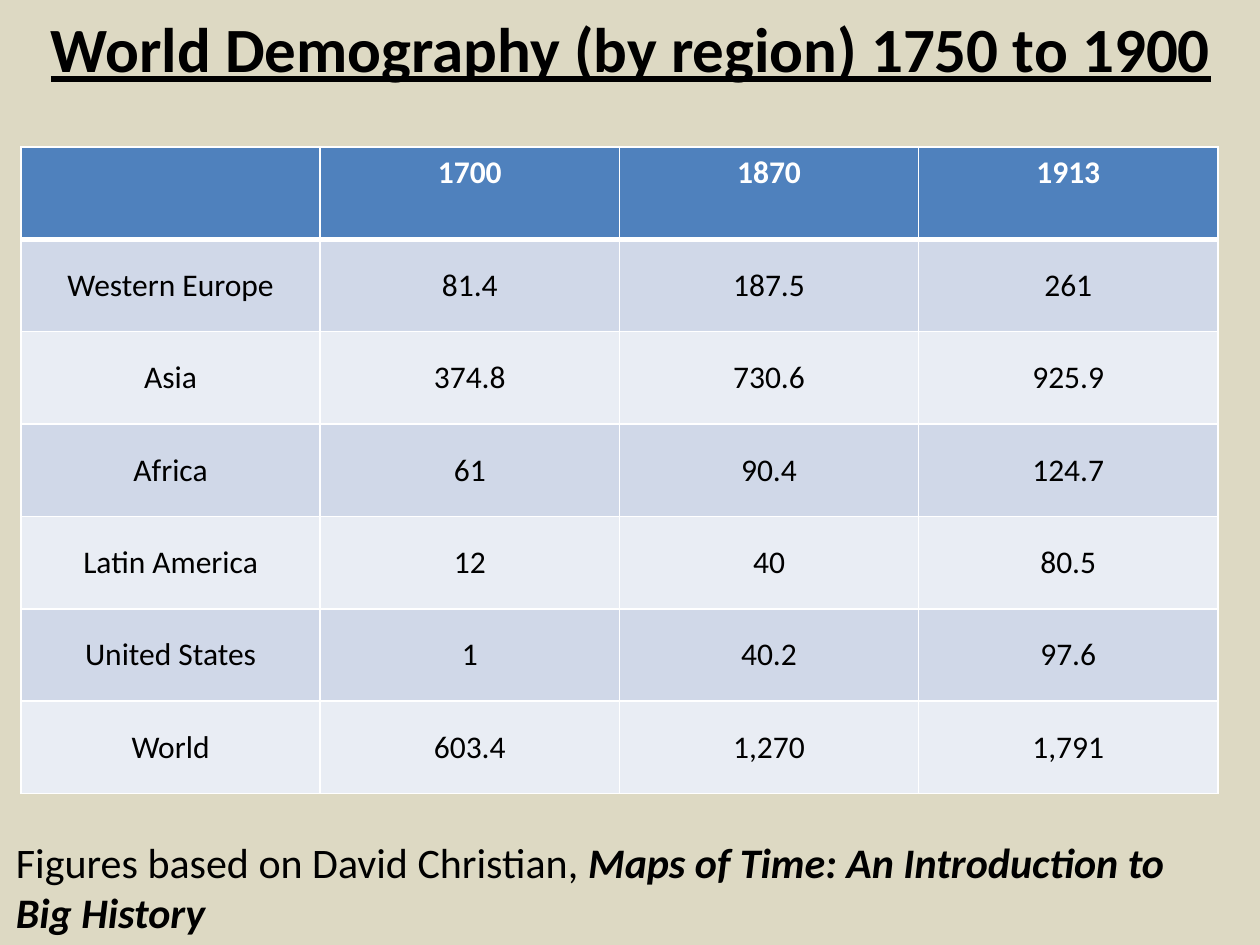
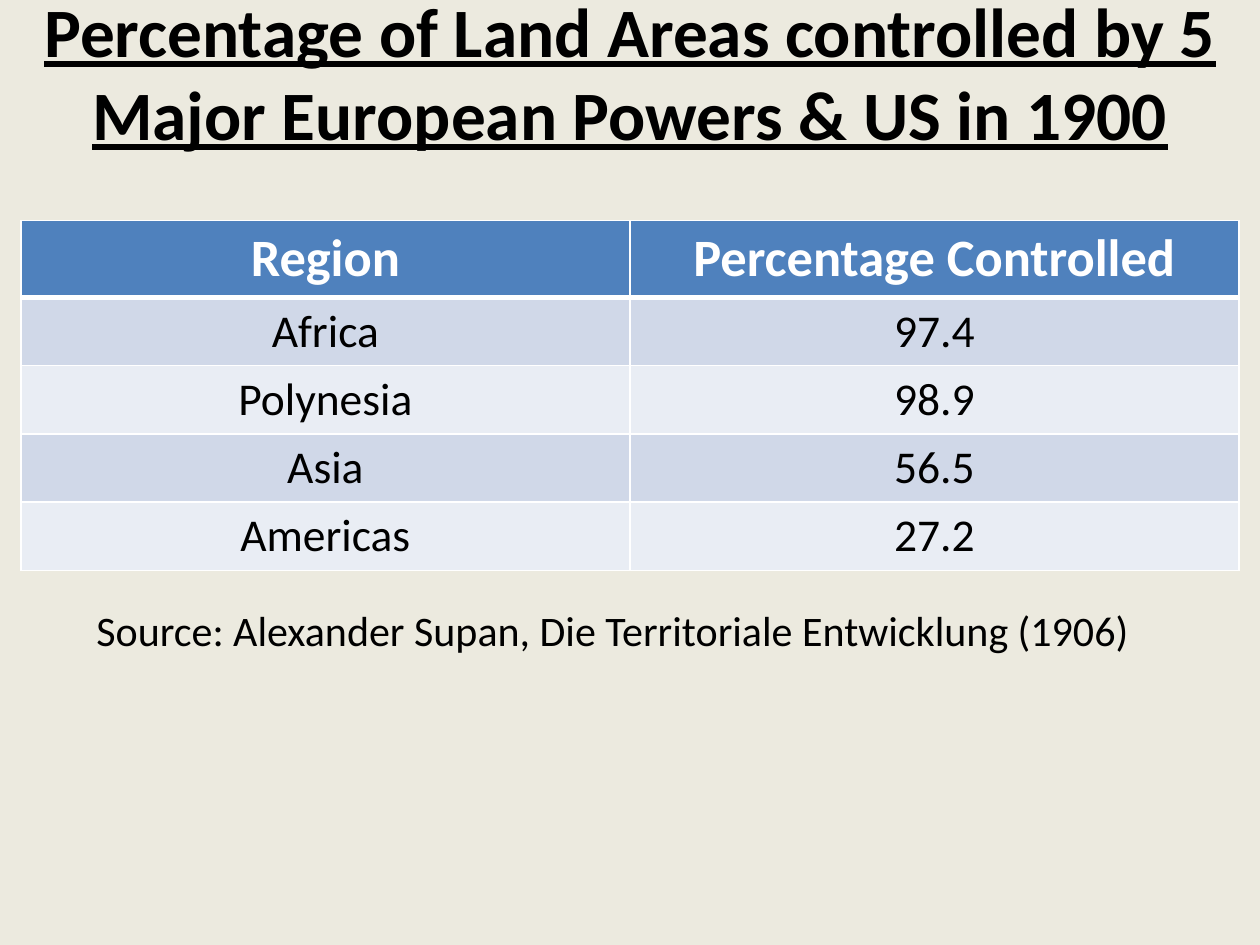
from lxml import etree
from pptx import Presentation
from pptx.dml.color import RGBColor
from pptx.enum.text import MSO_ANCHOR, MSO_AUTO_SIZE, PP_ALIGN
from pptx.oxml.ns import qn
from pptx.util import Pt

MID, TOP = MSO_ANCHOR.MIDDLE, MSO_ANCHOR.TOP
LEFT, CENTER = PP_ALIGN.LEFT, PP_ALIGN.CENTER
NONE, GROW = MSO_AUTO_SIZE.NONE, MSO_AUTO_SIZE.SHAPE_TO_FIT_TEXT

FONT = "Calibri"
HUES = {
    "sand": "DDD9C3",
    "pale": "ECEADF",
    "head": "4F81BD",
    "odd": "D0D8E8",
    "even": "E9EDF4",
    "text": "000000",
    "white": "FFFFFF",
}


def hue(name):
    return RGBColor.from_string(HUES[name])


class Deck:
    def __init__(self):
        self.prs = Presentation()
        self.prs.slide_width, self.prs.slide_height = Pt(720), Pt(540)
        self.slide = None

    def page(self, back):
        self.slide = self.prs.slides.add_slide(self.prs.slide_layouts[5])
        fill = self.slide.background.fill
        fill.solid()
        fill.fore_color.rgb = hue(back)

    def style(self, para, size, color="text", bold=False, align=CENTER):
        para.alignment = align
        for run in para.runs:
            font = run.font
            font.name, font.size, font.bold = FONT, Pt(size), bold
            font.color.rgb = hue(color)

    def title(self, text, box, size):
        shape = self.slide.shapes.title
        shape.left, shape.top, shape.width, shape.height = map(Pt, box)
        frame = shape.text_frame
        frame.text = text
        frame.word_wrap, frame.auto_size = True, NONE
        frame.vertical_anchor = MID
        para = frame.paragraphs[0]
        self.style(para, size, bold=True)
        para.runs[0].font.underline = True

    def note(self, text, box, book=""):
        frame = self.slide.shapes.add_textbox(*map(Pt, box)).text_frame
        frame.word_wrap, frame.auto_size = True, GROW
        frame.text = text
        para = frame.paragraphs[0]
        if book:
            para.add_run().text = book
        self.style(para, 24, align=LEFT)
        for run in para.runs[1:]:
            run.font.bold = run.font.italic = True

    def edge(self, cell, side, width):
        line = etree.SubElement(cell._tc.get_or_add_tcPr(), qn("a:ln" + side),
                                w=str(Pt(width)))
        fill = etree.SubElement(line, qn("a:solidFill"))
        etree.SubElement(fill, qn("a:srgbClr"), val=HUES["white"])

    def table(self, rows, box, highs, sizes, anchor):
        """highs, sizes: (header, body); anchor: header only."""
        grid = self.slide.shapes.add_table(
            len(rows), len(rows[0]), *map(Pt, box)).table
        for col in grid.columns:
            col.width = Pt(box[2] / len(rows[0]))
        for r, row in enumerate(rows):
            part = min(r, 1)
            grid.rows[r].height = Pt(highs[part])
            back = "head" if r == 0 else "odd" if r % 2 else "even"
            for c, text in enumerate(row):
                cell = grid.cell(r, c)
                # Borders come before the fill; a thick rule closes the header
                for side in "LRTB":
                    thick = (r, side) in ((0, "B"), (1, "T"))
                    self.edge(cell, side, 3 if thick else 1)
                cell.fill.solid()
                cell.fill.fore_color.rgb = hue(back)
                cell.vertical_anchor = MID if r else anchor
                cell.text_frame.text = text
                self.style(cell.text_frame.paragraphs[0], sizes[part],
                           "text" if r else "white", bold=r == 0)


def main():
    deck = Deck()

    # World demography
    deck.page("sand")
    deck.title("World Demography (by region) 1750 to 1900",
               (0.5, 6, 720, 42), 36)
    people = [
        ("", "1700", "1870", "1913"),
        ("Western Europe", "81.4", "187.5", "261"),
        ("Asia", "374.8", "730.6", "925.9"),
        ("Africa", "61", "90.4", "124.7"),
        ("Latin America", "12", "40", "80.5"),
        ("United States", "1", "40.2", "97.6"),
        ("World", "603.4", "1,270", "1,791"),
    ]
    deck.table(people, (12, 84, 684, 369.6), (52.8, 52.8), (18, 18), TOP)
    deck.note("Figures based on David Christian, ", (2, 474.5, 702, 65.5),
              "Maps of Time: An Introduction to Big History")

    # Land areas
    deck.page("pale")
    deck.title("Percentage of Land Areas controlled by 5 "
               "Major European Powers & US in 1900",
               (12, 18, 696, 45), 39.6)
    land = [
        ("Region", "Percentage Controlled"),
        ("Africa", "97.4"),
        ("Polynesia", "98.9"),
        ("Asia", "56.5"),
        ("Americas", "27.2"),
    ]
    deck.table(land, (12, 126, 696, 199.4), (43.8, 38.9), (30, 26), MID)
    deck.note("Source: Alexander Supan, Die Territoriale Entwicklung (1906)",
              (48, 342, 636, 36))

    deck.prs.save("out.pptx")


if __name__ == "__main__":
    main()
